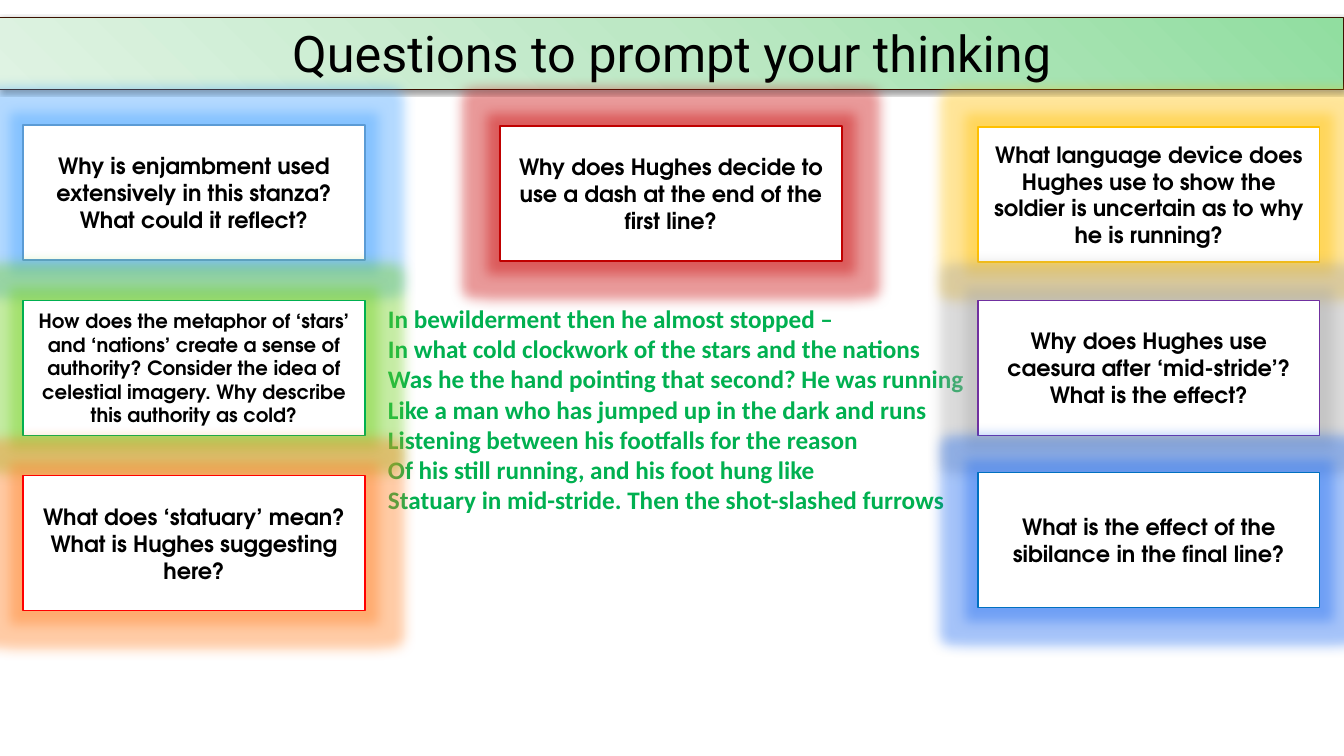
from dataclasses import dataclass

from lxml import etree
from pptx import Presentation
from pptx.dml.color import RGBColor
from pptx.enum import shapes, text
from pptx.oxml import ns
from pptx.util import Inches, Pt


@dataclass(frozen=True)
class Theme:
    ink: str = "000000"
    paper: str = "FFFFFF"
    poem: str = "00B050"
    banner_line: str = "3C1301"
    banner_stops: tuple[str, ...] = ("91DEA0", "BDE8C5", "DFF3E3")
    title_font: str = "Roboto"
    poem_font: str = "Calibri"
    card_font: str = "TeX Gyre Adventor"
    title_size: int = 36
    poem_size: int = 18
    card_size: int = 16
    small_size: int = 14


@dataclass(frozen=True)
class Card:
    left: float
    top: float
    border: str
    glow: str
    question: str
    size: int


THEME = Theme()
SLIDE_WIDTH, SLIDE_HEIGHT = 13.33, 7.5
CARD_WIDTH, CARD_HEIGHT = 3.39, 1.34
LEFT, MIDDLE, RIGHT = 0.23, 4.96, 9.7

POEM = (
    "In bewilderment then he almost stopped –",
    "In what cold clockwork of the stars and the nations",
    "Was he the hand pointing that second? He was running",
    "Like a man who has jumped up in the dark and runs",
    "Listening between his footfalls for the reason",
    "Of his still running, and his foot hung like",
    "Statuary in mid-stride. Then the shot-slashed furrows",
)

CARDS = (
    Card(LEFT, 1.24, "5B9BD5", "41A1FF",
         "Why is enjambment used extensively in this stanza? What could it reflect?",
         THEME.card_size),
    Card(LEFT, 2.98, "00B050", "70D01C",
         "How does the metaphor of ‘stars’ and ‘nations’ create a sense of authority? "
         "Consider the idea of celestial imagery. Why describe this authority as cold?",
         THEME.small_size),
    Card(LEFT, 4.72, "FF0000", "FF7D1F",
         "What does ‘statuary’ mean? What is Hughes suggesting here?",
         THEME.card_size),
    Card(RIGHT, 1.26, "FFC000", "FFC000",
         "What language device does Hughes use to show the soldier is uncertain "
         "as to why he is running?",
         THEME.card_size),
    Card(RIGHT, 2.98, "7030A0", "A5A5A5",
         "Why does Hughes use caesura after ‘mid-stride’? What is the effect?",
         THEME.card_size),
    Card(RIGHT, 4.69, "0070C0", "1F6BF0",
         "What is the effect of the sibilance in the final line?",
         THEME.card_size),
    Card(MIDDLE, 1.25, "C00000", "C80000",
         "Why does Hughes decide to use a dash at the end of the first line?",
         THEME.card_size),
)


def drawing_element(body: str):
    root = etree.fromstring(f'<root xmlns:a="{ns.nsuri("a")}">{body}</root>')
    return ns_parse(etree.tostring(root[0]))


def ns_parse(markup: bytes):
    from pptx.oxml import parse_xml
    return parse_xml(markup)


def set_effect(box, effect: str) -> None:
    box.shadow.inherit = False
    effects = box.element.spPr.find(ns.qn("a:effectLst"))
    effects.append(drawing_element(effect))


def style_paragraph(para, font: str, size: int, colour: str, bold: bool,
                    align=text.PP_ALIGN.LEFT) -> None:
    para.alignment = align
    para.font.name = font
    para.font.size = Pt(size)
    para.font.bold = bold
    para.font.color.rgb = RGBColor.from_string(colour)


def add_box(page, left: float, top: float, width: float, height: float,
            border: str, weight: float):
    box = page.shapes.add_shape(shapes.MSO_SHAPE.RECTANGLE, Inches(left),
                                Inches(top), Inches(width), Inches(height))
    box.fill.solid()
    box.fill.fore_color.rgb = RGBColor.from_string(THEME.paper)
    box.line.color.rgb = RGBColor.from_string(border)
    box.line.width = Pt(weight)
    box.text_frame.word_wrap = True
    return box


def add_banner(page, title: str) -> None:
    box = add_box(page, 0, 0.17, SLIDE_WIDTH, 0.72, THEME.banner_line, 0.75)
    stops = "".join(
        f'<a:gs pos="{index * 50000}"><a:srgbClr val="{colour}"/></a:gs>'
        for index, colour in enumerate(THEME.banner_stops))
    gradient = drawing_element(
        f'<a:gradFill rotWithShape="1"><a:gsLst>{stops}</a:gsLst>'
        '<a:path path="circle"><a:fillToRect l="100000" b="100000"/></a:path>'
        '</a:gradFill>')
    properties = box.element.spPr
    properties.replace(properties.find(ns.qn("a:solidFill")), gradient)
    set_effect(box, f'<a:outerShdw blurRad="{Pt(3.1)}" dist="{Pt(1.6)}" dir="5400000" '
                    f'rotWithShape="0"><a:srgbClr val="{THEME.ink}">'
                    '<a:alpha val="38000"/></a:srgbClr></a:outerShdw>')
    box.text_frame.vertical_anchor = text.MSO_ANCHOR.TOP
    box.text_frame.text = title
    style_paragraph(box.text_frame.paragraphs[0], THEME.title_font, THEME.title_size,
                    THEME.ink, False, text.PP_ALIGN.CENTER)


def add_poem(page) -> None:
    box = page.shapes.add_textbox(Inches(3.75), Inches(2.96), Inches(6.67), Inches(2.22))
    box.text_frame.word_wrap = True
    box.text_frame.text = "\n".join(POEM)
    for para in box.text_frame.paragraphs:
        style_paragraph(para, THEME.poem_font, THEME.poem_size, THEME.poem, True)


def add_card(page, card: Card) -> None:
    box = add_box(page, card.left, card.top, CARD_WIDTH, CARD_HEIGHT, card.border, 1)
    set_effect(box, f'<a:glow rad="{Pt(18)}"><a:srgbClr val="{card.glow}">'
                    '<a:alpha val="40000"/></a:srgbClr></a:glow>')
    box.text_frame.vertical_anchor = text.MSO_ANCHOR.MIDDLE
    box.text_frame.text = card.question
    style_paragraph(box.text_frame.paragraphs[0], THEME.card_font, card.size,
                    THEME.ink, True, text.PP_ALIGN.CENTER)


def main() -> None:
    deck = Presentation()
    deck.slide_width = Inches(SLIDE_WIDTH)
    deck.slide_height = Inches(SLIDE_HEIGHT)
    page = deck.slides.add_slide(deck.slide_layouts[6])
    add_banner(page, "Questions to prompt your thinking")
    add_poem(page)
    for card in CARDS:
        add_card(page, card)
    deck.save("out.pptx")


if __name__ == "__main__":
    main()
